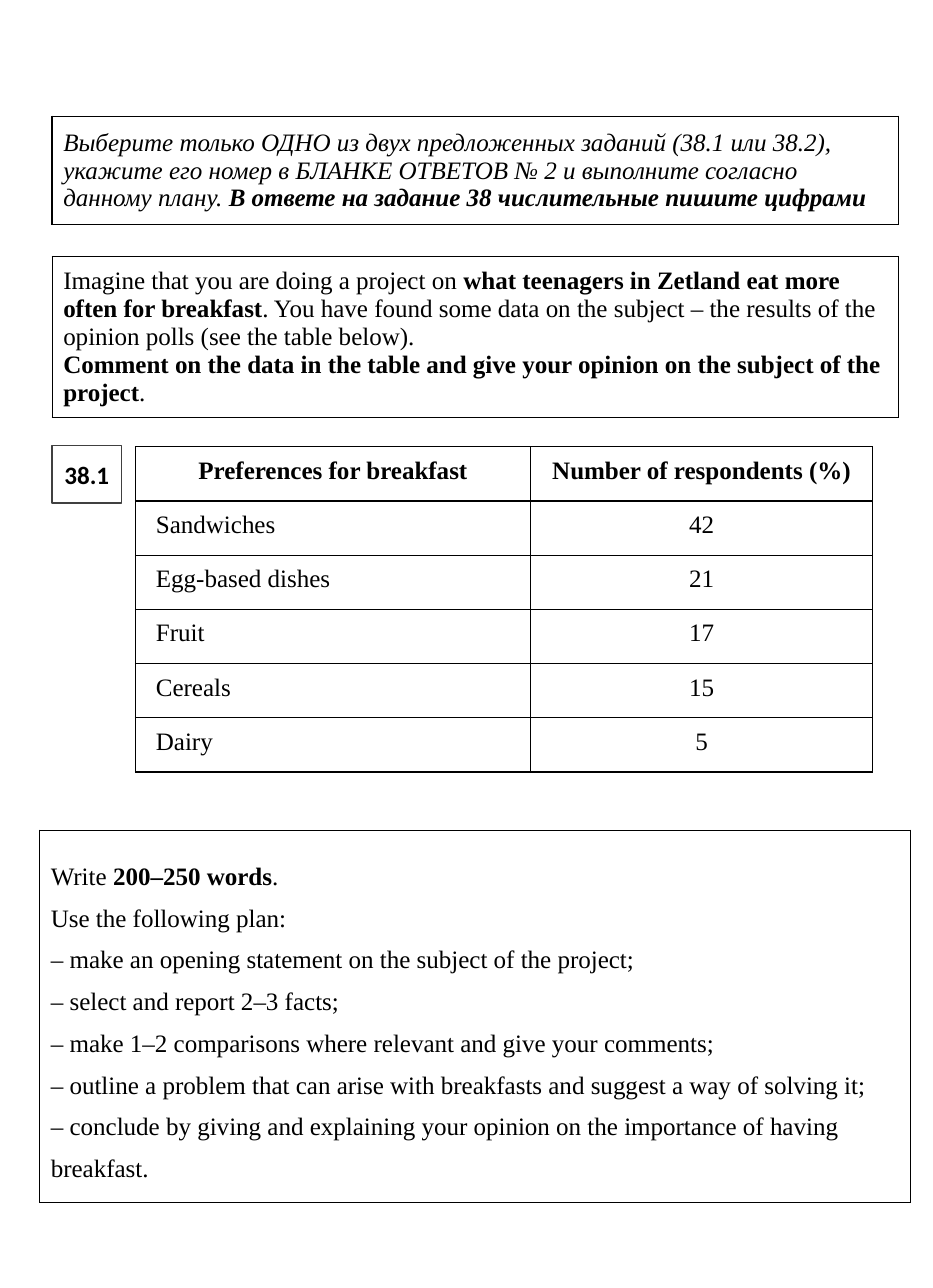
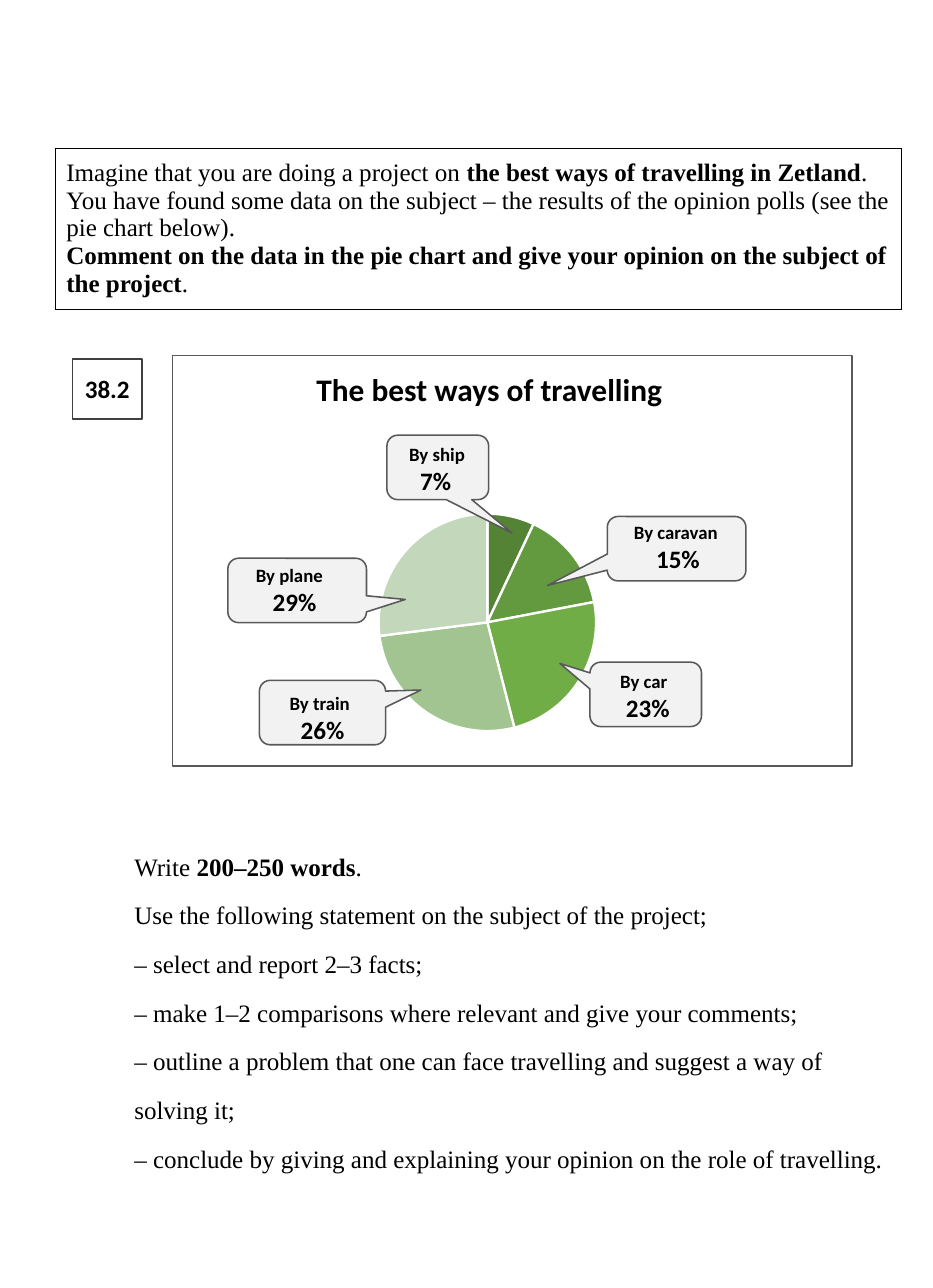
from lxml import etree
from pptx import Presentation
from pptx.chart.data import CategoryChartData as ChartData
from pptx.dml.color import RGBColor
from pptx.enum.chart import XL_CHART_TYPE as Kind
from pptx.enum.shapes import MSO_SHAPE as Shape
from pptx.enum.text import MSO_ANCHOR as Anchor, MSO_AUTO_SIZE as Fit, PP_ALIGN as Align
from pptx.oxml import parse_xml
from pptx.oxml.ns import nsdecls, qn
from pptx.util import Cm, Pt

# Shared style
SERIF, SANS = "Times New Roman", "Calibri"
BLACK, WHITE, DARK, GREY, PALE = "000000", "FFFFFF", "404040", "595959", "F2F2F2"
GREENS = ["558336", "639A3F", "70AD47", "A1C490", "C3D8BB"]

# Content: a paragraph is a list of (text, style) runs
RULES = [
    [("Выберите только ОДНО из двух предложенных заданий (38.1 или 38.2),", "i")],
    [("укажите его номер в БЛАНКЕ ОТВЕТОВ № 2 и выполните согласно данному плану. ", "i"),
     ("В ответе на задание 38 числительные пишите цифрами", "bi")],
]
FOOD = [
    ("Preferences for breakfast", "Number of respondents (%)"),
    ("Sandwiches", "42"),
    ("Egg-based dishes", "21"),
    ("Fruit", "17"),
    ("Cereals", "15"),
    ("Dairy", "5"),
]
WORDS = [("Write ", ""), ("200–250 words", "b"), (".", "")]
FACTS = [
    "– select and report 2–3 facts;",
    "– make 1–2 comparisons where relevant and give your comments;",
]
MEALS = [
    "Use the following plan:",
    "– make an opening statement on the subject of the project;",
    *FACTS,
    "– outline a problem that can arise with breakfasts and suggest a way of solving it;",
    "– conclude by giving and explaining your opinion on the importance of having breakfast.",
]
TRIPS = [
    "Use the following statement on the subject of the project;",
    *FACTS,
    "– outline a problem that one can face travelling and suggest a way of solving it;",
    "– conclude by giving and explaining your opinion on the role of travelling.",
]
SHARES = [7, 15, 24, 27, 27]
# name, share, left, top, width, pointer, left inset, top inset, share indent (cm)
CALLS = [
    ("By plane", "29%", 5.13, 12.57, 3.12, (0.78, 0.14), 0.56, 0.05, 0.38),
    ("By train", "26%", 5.84, 15.32, 2.84, (0.78, -0.35), 0.61, 0.18, 0.25),
    ("By car", "23%", 13.28, 14.91, 2.51, (-0.77, -0.48), 0.61, 0.1, 0.13),
    ("By caravan", "15%", 13.67, 11.63, 3.12, (-0.93, 0.57), 0.53, 0.03, 0.5),
    ("By ship", "7%", 8.71, 9.8, 2.29, (0.73, 1.02), 0.43, 0.1, 0.25),
]


def color(code):
    return RGBColor.from_string(code)


def cms(*vals):
    return [Cm(v) for v in vals]


def task(topic, kind):
    return [
        [("Imagine that you are doing a project on ", ""), (topic, "b"),
         (". You have found some data on the subject – the results of the "
          f"opinion polls (see the {kind} below).", "")],
        [(f"Comment on the data in the {kind} and give your opinion on the "
          "subject of the project", "b"), (".", "")],
    ]


def plan(lines):
    return [WORDS] + [[(line, "")] for line in lines]


def add_run(para, text, style="", size=16, face=SERIF):
    run = para.add_run()
    run.text = text
    font = run.font
    font.name, font.size = face, Pt(size)
    font.bold, font.italic = "b" in style, "i" in style
    font.color.rgb = color(BLACK)


def write(frame, paras, align=Align.LEFT, space=1.0, size=16, face=SERIF):
    for n, runs in enumerate(paras):
        para = frame.add_paragraph() if n else frame.paragraphs[0]
        para.alignment, para.line_spacing = align, space
        para.space_before = Pt(0)
        for text, style in runs:
            add_run(para, text, style, size, face)


# Tables
def add_grid(slide, left, top, cols, row, count, width):
    x, y, w, h = cms(left, top, sum(cols), row * count)
    grid = slide.shapes.add_table(count, len(cols), x, y, w, h).table
    grid.first_row = grid.horz_banding = False
    for col, size in zip(grid.columns, cols):
        col.width = Cm(size)
    for line in grid.rows:
        line.height = Cm(row)
    for cell in grid.iter_cells():
        props = cell._tc.get_or_add_tcPr()
        for side in "LRTB":
            edge = etree.SubElement(props, qn(f"a:ln{side}"), w=str(Pt(width)))
            fill = etree.SubElement(edge, qn("a:solidFill"))
            etree.SubElement(fill, qn("a:srgbClr"), val=BLACK)
        cell.fill.background()
    return grid


def add_box(slide, left, top, width, height, paras, line=0.5, space=1.0):
    cell = add_grid(slide, left, top, [width], height, 1, line).cell(0, 0)
    cell.vertical_anchor = Anchor.MIDDLE
    write(cell.text_frame, paras, space=space)


def add_food(slide):
    grid = add_grid(slide, 3.05, 10.06, [8.89, 7.7], 1.22, len(FOOD), 1)
    for r, row in enumerate(FOOD):
        for c, text in enumerate(row):
            cell = grid.cell(r, c)
            cell.margin_left = cell.margin_right = Cm(0.46)
            cell.margin_top = cell.margin_bottom = Cm(0.23)
            head = r == 0
            align = Align.CENTER if head or c else Align.LEFT
            write(cell.text_frame, [[(text, "b" if head else "")]], align)


# Shapes
def add_form(slide, kind, box, fill, line, width=1):
    form = slide.shapes.add_shape(kind, *cms(*box))
    form.shadow.inherit = False
    if fill:
        form.fill.solid()
        form.fill.fore_color.rgb = color(fill)
    else:
        form.fill.background()
    form.line.color.rgb = color(line)
    form.line.width = Pt(width)
    return form


def add_tag(slide, left, top, height, text):
    form = add_form(slide, Shape.RECTANGLE, (left, top, 1.57, height), WHITE, DARK)
    frame = form.text_frame
    frame.margin_left = frame.margin_right = 0
    frame.vertical_anchor = Anchor.MIDDLE
    write(frame, [[(text, "b")]], Align.CENTER, face=SANS)


def add_call(slide, name, share, left, top, width, tip, inset, drop, indent):
    form = add_form(slide, Shape.ROUNDED_RECTANGULAR_CALLOUT,
                    (left, top, width, 1.45), PALE, GREY)
    for n, value in enumerate(tip):
        form.adjustments[n] = value
    frame = form.text_frame
    frame.word_wrap = True
    frame.vertical_anchor = Anchor.TOP
    frame.margin_left, frame.margin_top = cms(inset, drop)
    frame.margin_right = frame.margin_bottom = 0
    write(frame, [[(name, "b")]], size=12, face=SANS)
    para = frame.add_paragraph()
    para.alignment = Align.LEFT
    para._p.get_or_add_pPr().set("marL", str(Cm(indent)))
    add_run(para, share, "b", face=SANS)


# Placeholders
def place(holder, box):
    holder.left, holder.top, holder.width, holder.height = cms(*box)
    frame = holder.text_frame
    frame.word_wrap, frame.auto_size = True, Fit.NONE
    return frame


def unbullet(frame):
    for para in frame.paragraphs:
        props = para._p.get_or_add_pPr()
        props.set("marL", "0")
        props.set("indent", "0")
        etree.SubElement(props, qn("a:buNone"))


# Pie chart
def add_pie(slide):
    data = ChartData()
    data.categories = [str(n + 1) for n in range(len(SHARES))]
    data.add_series("Series 1", SHARES)
    box = cms(5.87, 9.78, 8.43, 7.77)
    chart = slide.shapes.add_chart(Kind.PIE, *box, data).chart
    chart.has_title = chart.has_legend = False
    chart.font.name, chart.font.size = SANS, Pt(10)
    chart.font.color.rgb = color(BLACK)
    plot = chart.plots[0]
    plot.vary_by_categories = True
    for n, code in enumerate(GREENS):
        look = plot.series[0].points[n].format
        look.fill.solid()
        look.fill.fore_color.rgb = color(code)
        look.line.color.rgb = color(WHITE)
        look.line.width = Pt(1.5)
    area = chart.element.find(".//" + qn("c:plotArea"))
    for old in area.findall(qn("c:layout")):
        area.remove(old)
    marks = [("layoutTarget", "inner"), ("xMode", "edge"), ("yMode", "edge"),
             ("x", 0.23), ("y", 0.23), ("w", 0.75), ("h", 0.63)]
    inner = "".join(f'<c:{tag} val="{val}"/>' for tag, val in marks)
    area.insert(0, parse_xml(
        f'<c:layout {nsdecls("c")}><c:manualLayout>{inner}</c:manualLayout></c:layout>'))


def add_meals(deck):
    slide = deck.slides.add_slide(deck.slide_layouts[6])
    add_box(slide, 1.17, 2.62, 19.05, 2.44, RULES, line=1)
    add_box(slide, 1.17, 5.77, 19.05, 3.63,
            task("what teenagers in Zetland eat more often for breakfast", "table"))
    add_box(slide, 0.89, 18.69, 19.61, 8.38, plan(MEALS), space=1.5)
    add_tag(slide, 1.17, 10.03, 1.3, "38.1")
    add_food(slide)


def add_trips(deck):
    slide = deck.slides.add_slide(deck.slide_layouts[1])
    title = place(slide.shapes.title, (6.1, 8.2, 9.83, 1.12))
    write(title, [[("The best ways of travelling", "b")]], Align.CENTER, size=20, face=SANS)
    body = place(slide.placeholders[1], (2.77, 18.62, 17.55, 7.32))
    write(body, plan(TRIPS), space=1.62)
    unbullet(body)
    add_box(slide, 1.24, 3.33, 19.05, 3.63,
            task("the best ways of travelling in Zetland", "pie chart"))
    add_tag(slide, 1.63, 8.08, 1.35, "38.2")
    add_form(slide, Shape.RECTANGLE, (3.89, 8, 15.29, 9.25), None, GREY, 0.75)
    add_pie(slide)
    for call in CALLS:
        add_call(slide, *call)


def main():
    deck = Presentation()
    deck.slide_width, deck.slide_height = cms(21, 29)
    add_meals(deck)
    add_trips(deck)
    deck.save("out.pptx")


if __name__ == "__main__":
    main()
